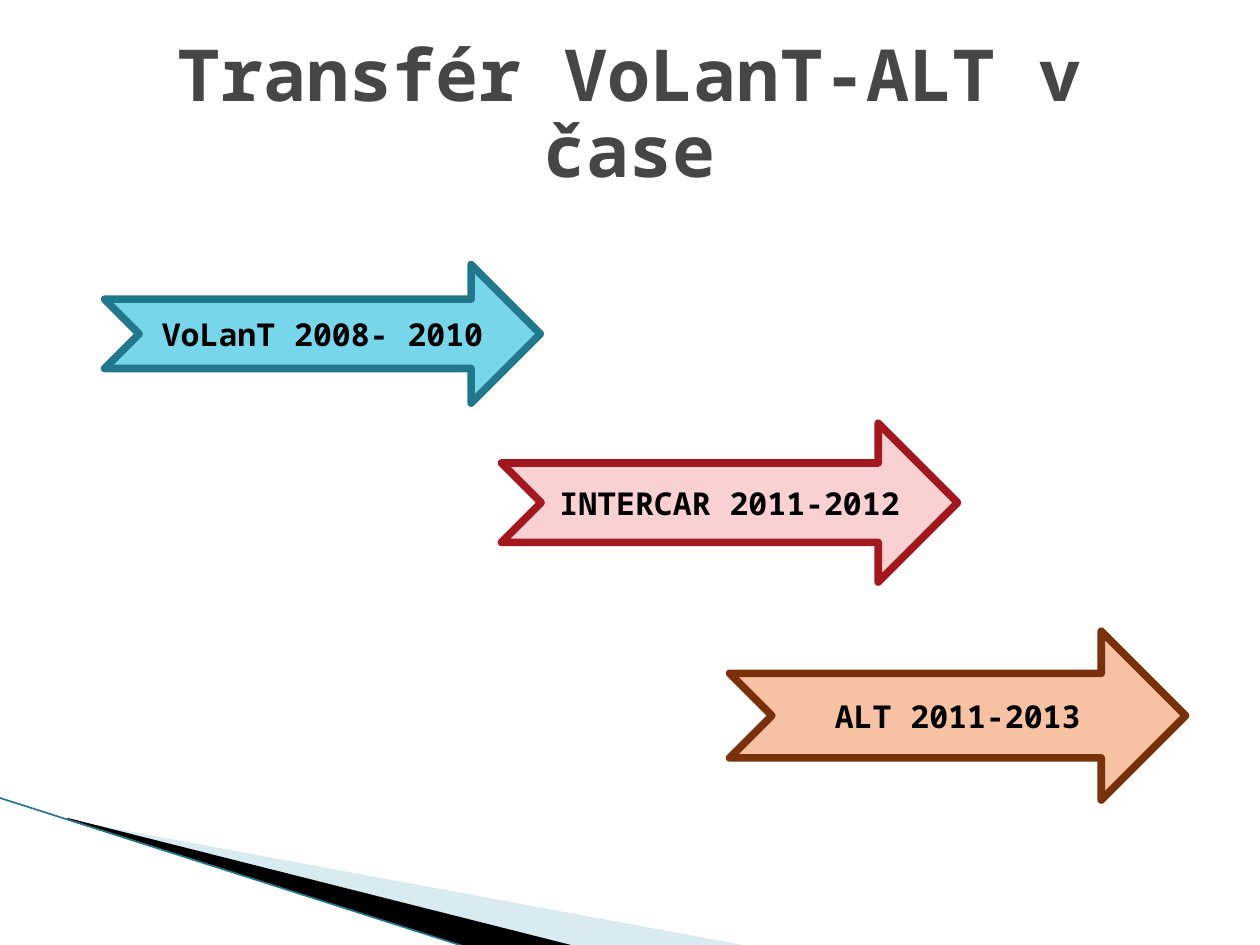
from lxml import etree
from pptx import Presentation
from pptx.dml.color import RGBColor
from pptx.enum.shapes import MSO_CONNECTOR, MSO_SHAPE
from pptx.enum.text import MSO_ANCHOR, PP_ALIGN
from pptx.oxml.ns import qn
from pptx.util import Inches, Pt

ARROW = MSO_SHAPE.NOTCHED_RIGHT_ARROW
STRAIGHT = MSO_CONNECTOR.STRAIGHT
CENTER = PP_ALIGN.CENTER
MIDDLE = MSO_ANCHOR.MIDDLE

FONT = "Noto Sans Mono"
TITLE = "Transfér VoLanT-ALT v čase"
# Text, (left, top, width, height), fill, outline
PROJECTS = [
    ("VoLanT 2008- 2010", (0.83, 2.1, 3.46, 1.1), "78D6EA", "21788D"),
    ("INTERCAR 2011-2012", (3.98, 3.36, 3.62, 1.26), "F9D1D3", "A3171E"),
    ("ALT 2011-2013", (5.79, 5.01, 3.62, 1.34), "F7C1A4", "78310B"),
]
# Corner points, fill, opacity in percent
WEDGES = [
    ([(0.55, 6.51), (5.95, 7.51), (4.56, 7.51), (0.55, 6.5)], "A0CBDC", 40),
    ([(0.53, 6.49), (4.57, 7.51), (3.72, 7.52), (0.54, 6.5)], "000000", 100),
]
EDGE = [(-0.01, 6.33), (3.71, 7.52)]


def color(hex_string):
    return RGBColor.from_string(hex_string)


def write(shape, text, size, font_color="000000", spacing=None):
    frame = shape.text_frame
    frame.word_wrap = True
    frame.vertical_anchor = MIDDLE
    paragraph = frame.paragraphs[0]
    paragraph.alignment = CENTER
    if spacing:
        paragraph.line_spacing = spacing
    run = paragraph.add_run()
    run.text = text
    run.font.name = FONT
    run.font.size = Pt(size)
    run.font.bold = True
    run.font.color.rgb = color(font_color)


def add_wedge(slide, points, fill, opacity):
    corners = [(Inches(x), Inches(y)) for x, y in points]
    builder = slide.shapes.build_freeform(*corners[0])
    builder.add_line_segments(corners[1:], close=True)
    shape = builder.convert_to_shape()
    shape.shadow.inherit = False
    shape.fill.solid()
    shape.fill.fore_color.rgb = color(fill)
    shape.line.fill.background()
    if opacity < 100:
        fill_color = shape._element.spPr.find(qn("a:solidFill"))[0]
        etree.SubElement(fill_color, qn("a:alpha"), val=str(opacity * 1000))


def add_arrow(slide, text, box, fill, outline):
    shape = slide.shapes.add_shape(ARROW, *map(Inches, box))
    shape.shadow.inherit = False
    shape.fill.solid()
    shape.fill.fore_color.rgb = color(fill)
    shape.line.color.rgb = color(outline)
    shape.line.width = Pt(4.33)
    etree.SubElement(shape.line._get_or_add_ln(), qn("a:round"))
    write(shape, text, 18)


def main():
    presentation = Presentation()
    presentation.slide_width, presentation.slide_height = Inches(10), Inches(7.5)
    slide = presentation.slides.add_slide(presentation.slide_layouts[6])

    # Corner decoration
    for wedge in WEDGES:
        add_wedge(slide, *wedge)
    ends = [Inches(value) for point in EDGE for value in point]
    edge = slide.shapes.add_connector(STRAIGHT, *ends)
    edge.line.color.rgb = color("21788D")
    edge.line.width = Pt(0.95)
    etree.SubElement(edge._element.spPr, qn("a:effectLst"))

    # Title
    title = slide.shapes.add_textbox(Inches(0.5), Inches(0.3), Inches(9), Inches(1.25))
    write(title, TITLE, 41, "464646", spacing=0.88)

    # Project timeline
    for project in PROJECTS:
        add_arrow(slide, *project)

    presentation.save("out.pptx")


if __name__ == "__main__":
    main()
